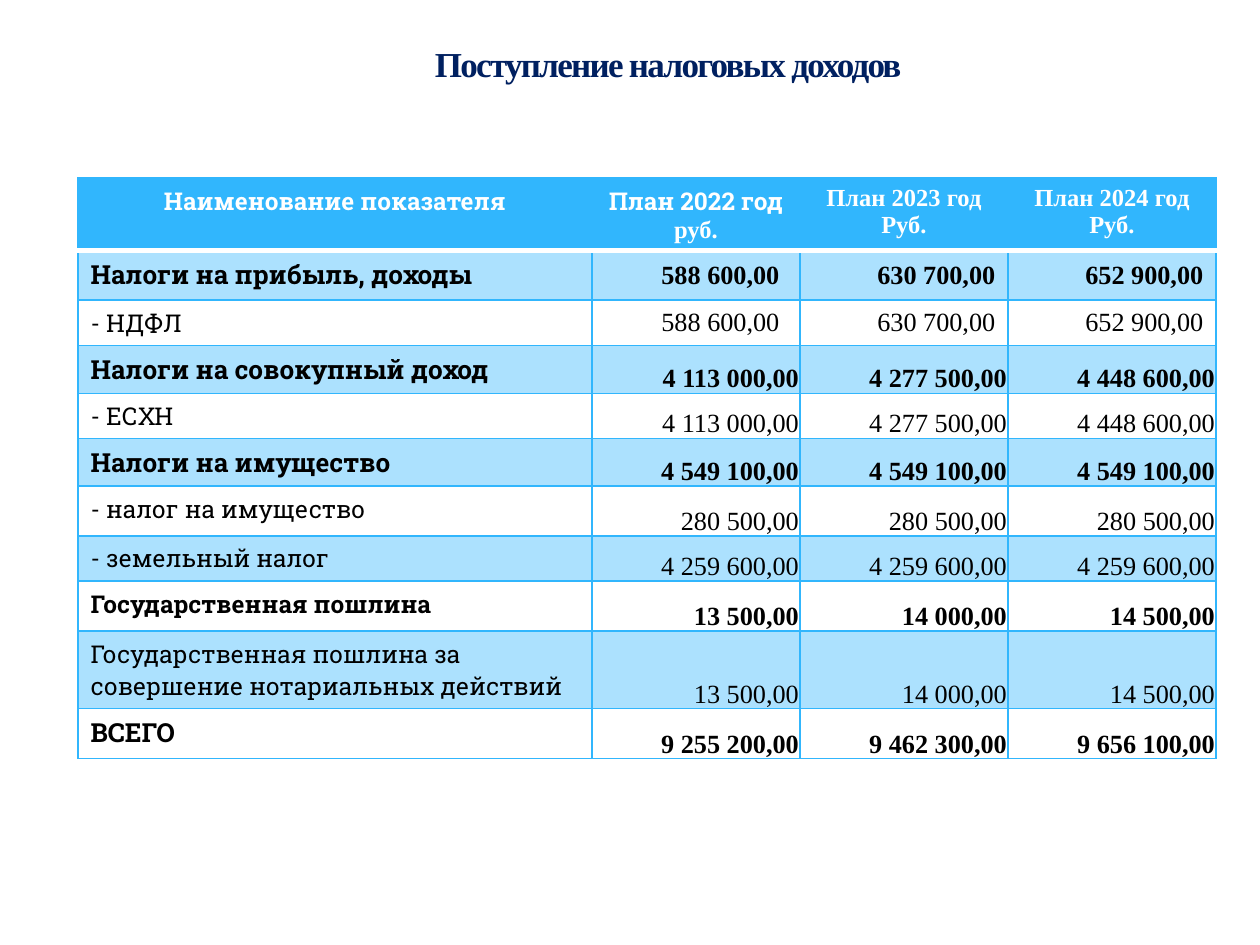
from lxml.etree import SubElement
from pptx import Presentation
from pptx.dml.color import RGBColor
from pptx.enum.text import MSO_ANCHOR, PP_ALIGN
from pptx.oxml import parse_xml
from pptx.oxml.ns import nsdecls, qn
from pptx.util import Pt

PX = 914400 / 126
SERIF, SLAB = "Times New Roman", "Roboto Slab"
BLUE, WHITE, BLACK, NAVY = "31B6FD", "FFFFFF", "000000", "002060"

COLUMN_WIDTHS = [514, 208, 208, 208]
ROW_HEIGHTS = [69, 50, 45, 48, 42, 43, 50, 45, 50, 69, 50]

# Each heading is a list of (text, font) lines.
HEADINGS = [
    [("Наименование показателя", SLAB)],
    [("План 2022 год", SLAB), ("руб.", SERIF)],
    [("План 2023 год", SERIF), ("Руб.", SERIF)],
    [("План 2024 год", SERIF), ("Руб.", SERIF)],
]

# Label, label size, bold, values for the three years.
INCOME = [
    ("Налоги на прибыль, доходы", 15, True, "588 600,00\t", "630 700,00", "652 900,00"),
    ("- НДФЛ", 14, False, "588 600,00\t", "630 700,00", "652 900,00"),
    ("Налоги на совокупный доход", 15, True, "4 113 000,00", "4 277 500,00", "4 448 600,00"),
    ("- ЕСХН", 14, False, "4 113 000,00", "4 277 500,00", "4 448 600,00"),
    ("Налоги на имущество", 15, True, "4 549 100,00", "4 549 100,00", "4 549 100,00"),
    ("- налог на имущество", 14, False, "280 500,00", "280 500,00", "280 500,00"),
    ("- земельный налог", 14, False, "4 259 600,00", "4 259 600,00", "4 259 600,00"),
    ("Государственная пошлина", 14, True, "13 500,00", "14 000,00", "14 500,00"),
    ("Государственная пошлина за совершение нотариальных действий", 14, False,
     "13 500,00", "14 000,00", "14 500,00"),
    ("ВСЕГО", 15, True, "9 255 200,00", "9 462 300,00", "9 656 100,00"),
]


def px(n):
    return round(n * PX)


def rgb(value):
    return RGBColor.from_string(value)


def add_run(p, text, font, size, color, bold, align):
    p.alignment = align
    r = p.add_run()
    r.text = text
    r.font.name, r.font.size, r.font.bold = font, Pt(size), bold
    r.font.color.rgb = rgb(color)
    return r


def fill_cell(cell, alpha=None):
    cell.fill.solid()
    cell.fill.fore_color.rgb = rgb(BLUE)
    if alpha:
        color = cell._tc.tcPr.find(".//" + qn("a:srgbClr"))
        SubElement(color, qn("a:alpha")).set("val", str(alpha * 1000))


def set_borders(cell, **special):
    """Draw thin blue sides, except those given as side=(colour, points)."""
    tcPr = cell._tc.get_or_add_tcPr()
    for i, side in enumerate("LRTB"):
        color, width = special.get(side, (BLUE, 1))
        tcPr.insert(i, parse_xml(
            f'<a:ln{side} {nsdecls("a")} w="{Pt(width)}"><a:solidFill>'
            f'<a:srgbClr val="{color}"/></a:solidFill></a:ln{side}>'))


def add_title(s):
    sp = s.shapes.title
    sp.left, sp.top, sp.width, sp.height = px(207), px(29), px(922), px(69)
    tf = sp.text_frame
    tf.word_wrap = True
    tf.vertical_anchor = MSO_ANCHOR.MIDDLE
    r = add_run(tf.paragraphs[0], "Поступление налоговых доходов",
                SERIF, 20, NAVY, True, PP_ALIGN.CENTER)
    r.font._element.set("spc", "-100")


def write_heading(cell, lines):
    fill_cell(cell)
    set_borders(cell, B=(WHITE, 3))
    tf = cell.text_frame
    for i, (text, font) in enumerate(lines):
        p = tf.add_paragraph() if i else tf.paragraphs[0]
        add_run(p, text, font, 14, WHITE, True, PP_ALIGN.CENTER)


def write_value(cell, text, bold, inset):
    if inset:
        cell.vertical_anchor = MSO_ANCHOR.MIDDLE
    else:
        cell.vertical_anchor = MSO_ANCHOR.BOTTOM
        cell.margin_left = cell.margin_top = cell.margin_right = px(1)
        cell.margin_bottom = 0
    add_run(cell.text_frame.paragraphs[0], text, SERIF, 15, BLACK, bold, PP_ALIGN.RIGHT)


def add_income_table(s):
    frame = s.shapes.add_table(len(ROW_HEIGHTS), len(COLUMN_WIDTHS), px(78), px(178),
                               px(sum(COLUMN_WIDTHS)), px(sum(ROW_HEIGHTS)))
    table = frame.table
    table.first_row = table.horz_banding = False
    for column, width in zip(table.columns, COLUMN_WIDTHS):
        column.width = px(width)
    for row, height in zip(table.rows, ROW_HEIGHTS):
        row.height = px(height)

    for col, lines in enumerate(HEADINGS):
        write_heading(table.cell(0, col), lines)

    for row, (label, size, bold, *values) in enumerate(INCOME, 1):
        for cell in table.rows[row].cells:
            if row % 2:
                fill_cell(cell, alpha=40)
            else:
                cell.fill.background()
            set_borders(cell, **({"T": (WHITE, 3)} if row == 1 else {}))
        add_run(table.cell(row, 0).text_frame.paragraphs[0], label,
                SLAB, size, BLACK, bold, PP_ALIGN.LEFT)
        for col, value in enumerate(values, 1):
            write_value(table.cell(row, col), value, bold, inset=row <= 2)


def main():
    prs = Presentation()
    prs.slide_width, prs.slide_height = px(1260), px(945)
    s = prs.slides.add_slide(prs.slide_layouts[5])
    add_income_table(s)
    add_title(s)
    prs.save("out.pptx")


if __name__ == "__main__":
    main()
